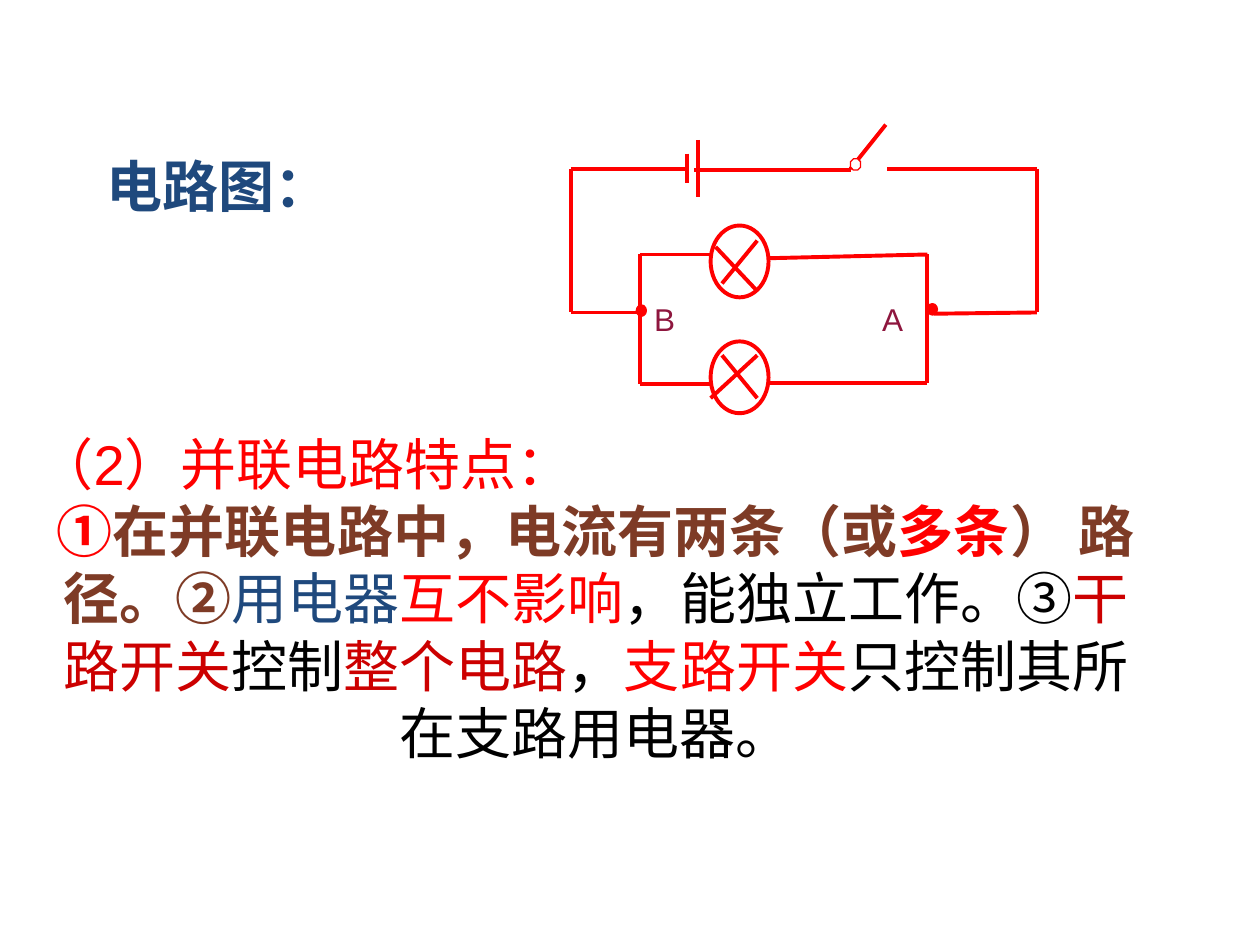
import pptx
import pptx.util
import pptx.dml.color
import pptx.enum.shapes
import pptx.enum.text
import pptx.oxml.ns
import lxml.etree

COLORS = {"wire": "FF0000", "paper": "FFFFFF", "navy": "1F497D", "brown": "7E3B26",
          "crimson": "CC0000", "black": "000000", "label": "8E163E"}
SHAPES = pptx.enum.shapes.MSO_SHAPE
ALIGN = pptx.enum.text.PP_ALIGN

deck = pptx.Presentation()
deck.slide_width = pptx.util.Inches(10)
deck.slide_height = pptx.util.Inches(7.5)
page = deck.slides.add_slide(deck.slide_layouts[6])

# Grid of 10 columns by 7.5 rows
COLUMN = deck.slide_width / 10
ROW = deck.slide_height / 7.5


def grid(left, top, width, height):
    return int(left * COLUMN), int(top * ROW), int(width * COLUMN), int(height * ROW)


def add_text(text, place, size=32, align=ALIGN.LEFT, wrap=True):
    """text is a list of paragraphs, each a list of (words, colour, bold)."""
    box = page.shapes.add_textbox(*grid(*place))
    box.text_frame.word_wrap = wrap
    for number, pieces in enumerate(text):
        para = box.text_frame.add_paragraph() if number else box.text_frame.paragraphs[0]
        para.alignment = align if number == len(text) - 1 else ALIGN.LEFT
        for words, color, bold in pieces:
            span = para.add_run()
            span.text = words
            span.font.name = "Arial"
            span.font.size = pptx.util.Pt(size)
            span.font.bold = bold
            span.font.color.rgb = pptx.dml.color.RGBColor.from_string(COLORS[color])


# Heading and explanation
add_text([[("电路图：", "navy", True)]], (0.75, 1.15, 2, 0.64), wrap=False)
add_text([
    [("（2）并联电路特点：", "wire", False)],
    [("①", "wire", True),
     ("在并联电路中，电流有两条（或", "brown", True),
     ("多条", "wire", True),
     ("） 路径。②", "brown", True),
     ("用电器", "navy", False),
     ("互不影响", "wire", False),
     ("，能独立工作。③", "black", False),
     ("干路开关", "crimson", False),
     ("控制", "black", False),
     ("整个电路", "crimson", False),
     ("，", "black", False),
     ("支路开关", "wire", False),
     ("只控制其所在支路用电器。", "black", False)],
], (0.2, 3.36, 9.06, 3.33), align=ALIGN.CENTER)

# Lamps, switch pivot and junctions: shape, place, fill, line width
parts = [
    (SHAPES.OVAL, (5.64, 1.79, 0.46, 0.57), "paper", 2.25),
    (SHAPES.OVAL, (5.64, 2.71, 0.46, 0.57), "paper", 2.25),
    (SHAPES.OCTAGON, (6.75, 1.26, 0.08, 0.09), "paper", 0.75),
    (SHAPES.FLOWCHART_CONNECTOR, (5.05, 2.42, 0.08, 0.09), "wire", 0.75),
    (SHAPES.FLOWCHART_CONNECTOR, (7.36, 2.41, 0.08, 0.09), "wire", 0.75),
]
for kind, place, fill, weight in parts:
    part = page.shapes.add_shape(kind, *grid(*place))
    part.shadow.inherit = False
    part.fill.solid()
    part.fill.fore_color.rgb = pptx.dml.color.RGBColor.from_string(COLORS[fill])
    part.line.color.rgb = pptx.dml.color.RGBColor.from_string(COLORS["wire"])
    part.line.width = pptx.util.Pt(weight)

# Wires as x1, y1, x2, y2
wires = [
    # Main loop
    (4.53, 1.34, 5.45, 1.34), (4.53, 1.34, 4.53, 2.48), (4.53, 2.48, 5.08, 2.48),
    (6.75, 1.35, 5.51, 1.35), (7.04, 1.34, 7.5, 1.34), (7.49, 1.34, 8.23, 1.34),
    (8.23, 1.34, 8.23, 2.48), (7.41, 2.49, 8.23, 2.48),
    # Battery plates and switch arm
    (5.45, 1.22, 5.45, 1.45), (5.54, 1.11, 5.54, 1.56), (6.75, 1.34, 7.03, 0.99),
    # Branches
    (5.08, 2.02, 5.08, 3.05), (5.08, 2.02, 5.64, 2.02), (5.08, 3.05, 5.64, 3.05),
    (6.09, 2.05, 7.36, 2.02), (7.36, 2.02, 7.36, 3.04), (6.1, 3.04, 7.36, 3.04),
    # Lamp crosses
    (5.68, 1.96, 6.01, 2.31), (6.01, 1.91, 5.73, 2.25),
    (5.73, 2.82, 6.01, 3.16), (6.01, 2.82, 5.64, 3.16),
]
for ends in wires:
    wire = page.shapes.add_connector(pptx.enum.shapes.MSO_CONNECTOR.STRAIGHT, *grid(*ends))
    wire.line.color.rgb = pptx.dml.color.RGBColor.from_string(COLORS["wire"])
    wire.line.width = pptx.util.Pt(2.25)
    lxml.etree.SubElement(wire._element.spPr, pptx.oxml.ns.qn("a:effectLst"))

# Bring the switch pivot's ring in front of the arm by drawing order of its tree
pivot = next(shape for shape in page.shapes
             if shape.shape_type == pptx.enum.shapes.MSO_SHAPE_TYPE.AUTO_SHAPE
             and shape.auto_shape_type == SHAPES.OCTAGON)
page.shapes._spTree.append(pivot._element)

# Junction labels
for letter, left in (("B", 5), ("A", 6.81)):
    add_text([[(letter, "label", False)]], (left, 2.33, 0.55, 0.4), size=18, align=ALIGN.CENTER)

deck.save("out.pptx")
